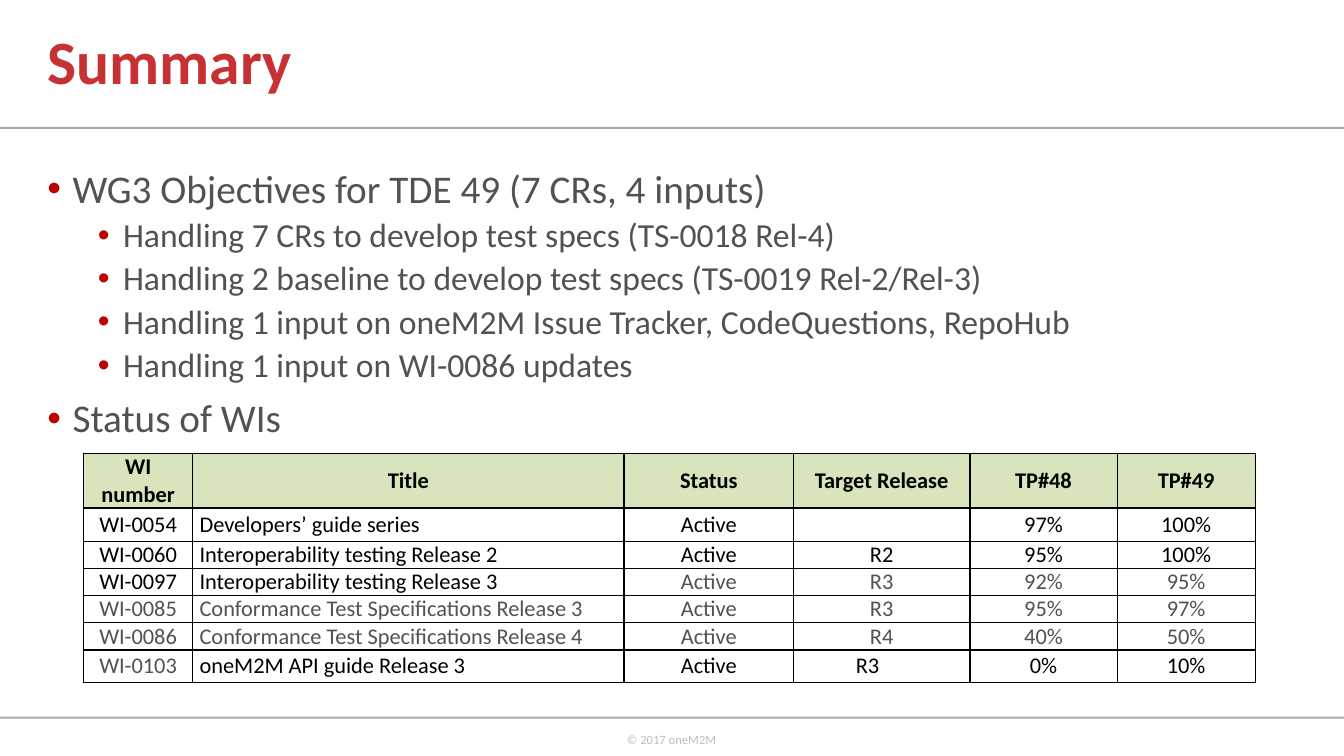
from lxml.etree import SubElement as Sub
from pptx import Presentation
from pptx.dml.color import RGBColor
from pptx.enum.shapes import MSO_SHAPE as Shape
from pptx.enum.text import MSO_ANCHOR as Anchor, MSO_AUTO_SIZE as Auto, PP_ALIGN as Align
from pptx.oxml.ns import qn
from pptx.util import Inches, Pt

BLACK, GREY, RED = "000000", "545054", "C00000"

POINTS = [
    (0, "WG3 Objectives for TDE 49 (7 CRs, 4 inputs)"),
    (1, "Handling 7 CRs to develop test specs (TS-0018 Rel-4)"),
    (1, "Handling 2 baseline to develop test specs (TS-0019 Rel-2/Rel-3)"),
    (1, "Handling 1 input on oneM2M Issue Tracker, CodeQuestions, RepoHub"),
    (1, "Handling 1 input on WI-0086 updates"),
    (0, "Status of WIs"),
]

HEADS = ["WI number", "Title", "Status", "Target Release", "TP#48", "TP#49"]
# Each item ends with the columns set in grey.
ITEMS = [
    (["WI-0054", "Developers’ guide series", "Active", "", "97%", "100%"], ()),
    (["WI-0060", "Interoperability testing Release 2", "Active", "R2", "95%", "100%"], ()),
    (["WI-0097", "Interoperability testing Release 3", "Active", "R3", "92%", "95%"], range(2, 6)),
    (["WI-0085", "Conformance Test Specifications Release 3", "Active", "R3", "95%", "97%"], range(6)),
    (["WI-0086", "Conformance Test Specifications Release 4", "Active", "R4", "40%", "50%"], range(6)),
    (["WI-0103", "oneM2M API guide Release 3", "Active", "R3", "0%", "10%"], (0,)),
]
WIDTHS = [1.08, 4.28, 1.68, 1.75, 1.46, 1.37]
HEIGHTS = [0.54, 0.33, 0.27, 0.27, 0.27, 0.27, 0.32]


def rgb(color):
    return RGBColor.from_string(color)


def place(shape, left, top, width, height):
    shape.left, shape.top = Inches(left), Inches(top)
    shape.width, shape.height = Inches(width), Inches(height)


def write(para, text, size=16, color=BLACK, bold=False, align=Align.LEFT):
    para.alignment = align
    run = para.add_run()
    run.text = text
    font = run.font
    font.name, font.size, font.bold = "Calibri", Pt(size), bold
    font.color.rgb = rgb(color)


def add_rule(slide, top):
    rule = slide.shapes.add_shape(
        Shape.RECTANGLE, 0, Inches(top), Inches(13.33), Inches(0.02))
    rule.shadow.inherit = False
    rule.fill.solid()
    rule.fill.fore_color.rgb = rgb("A7A9AC")
    rule.line.fill.background()


def add_foot(slide, text):
    box = slide.shapes.add_textbox(
        Inches(6.12), Inches(7.21), Inches(1.1), Inches(0.4))
    box.text_frame.word_wrap = False
    write(box.text_frame.paragraphs[0], text, size=9, color="BFBFBF")


def set_bullet(para, level):
    props = para._p.get_or_add_pPr()
    props.set("marL", str(Inches(0.25 + 0.5 * level)))
    props.set("indent", str(Inches(-0.25)))
    Sub(Sub(props, qn("a:buClr")), qn("a:srgbClr"), val=RED)
    Sub(props, qn("a:buFont"), typeface="Arial")
    Sub(props, qn("a:buChar"), char="•")


def fill_title(title, text):
    place(title, 0.37, 0, 8.59, 1.28)
    frame = title.text_frame
    frame.auto_size = Auto.NONE
    frame.vertical_anchor = Anchor.MIDDLE
    para = frame.paragraphs[0]
    para.line_spacing = 0.9
    write(para, text, size=44, color="C63133", bold=True)


def fill_list(body, points):
    place(body, 0.37, 1.63, 11.5, 4.76)
    frame = body.text_frame
    frame.auto_size = Auto.NONE
    for num, (level, text) in enumerate(points):
        para = frame.add_paragraph() if num else frame.paragraphs[0]
        para.level = level
        set_bullet(para, level)
        para.line_spacing = 0.9
        para.space_before = Pt((5 if level else 10) if num else 0)
        write(para, text, size=24 if level else 28, color=GREY)


def set_border(cell):
    props = cell._tc.get_or_add_tcPr()
    for num, side in enumerate(("a:lnL", "a:lnR", "a:lnT", "a:lnB")):
        line = props.makeelement(qn(side), {"w": str(Pt(1))})
        Sub(Sub(line, qn("a:solidFill")), qn("a:srgbClr"), val=BLACK)
        props.insert(num, line)


def fill_cell(cell, text, fill, **form):
    cell.fill.solid()
    cell.fill.fore_color.rgb = rgb(fill)
    cell.margin_left = cell.margin_right = Inches(0.07)
    cell.margin_top = cell.margin_bottom = 0
    cell.vertical_anchor = Anchor.MIDDLE
    set_border(cell)
    if text:
        write(cell.text_frame.paragraphs[0], text, **form)


def add_status(slide):
    table = slide.shapes.add_table(
        len(HEIGHTS), len(WIDTHS), Inches(0.83), Inches(4.5),
        Inches(sum(WIDTHS)), Inches(sum(HEIGHTS))).table
    for col, width in zip(table.columns, WIDTHS):
        col.width = Inches(width)
    for row, height in zip(table.rows, HEIGHTS):
        row.height = Inches(height)
    for num, head in enumerate(HEADS):
        fill_cell(table.cell(0, num), head, "D8E4BC", bold=True, align=Align.CENTER)
    for row, (texts, greys) in enumerate(ITEMS, 1):
        for col, text in enumerate(texts):
            fill_cell(table.cell(row, col), text, "FFFFFF",
                      color=GREY if col in greys else BLACK,
                      align=Align.LEFT if col == 1 else Align.CENTER)
    # The last release sits left of centre.
    table.cell(len(ITEMS), 3).margin_right = Inches(0.35)


def main():
    deck = Presentation()
    deck.slide_width, deck.slide_height = Inches(13.33), Inches(7.5)
    slide = deck.slides.add_slide(deck.slide_layouts[1])
    for top in (1.26, 7.11):
        add_rule(slide, top)
    add_foot(slide, "© 2017 oneM2M")
    fill_title(slide.shapes.title, "Summary")
    fill_list(slide.placeholders[1], POINTS)
    add_status(slide)
    deck.save("out.pptx")


if __name__ == "__main__":
    main()
